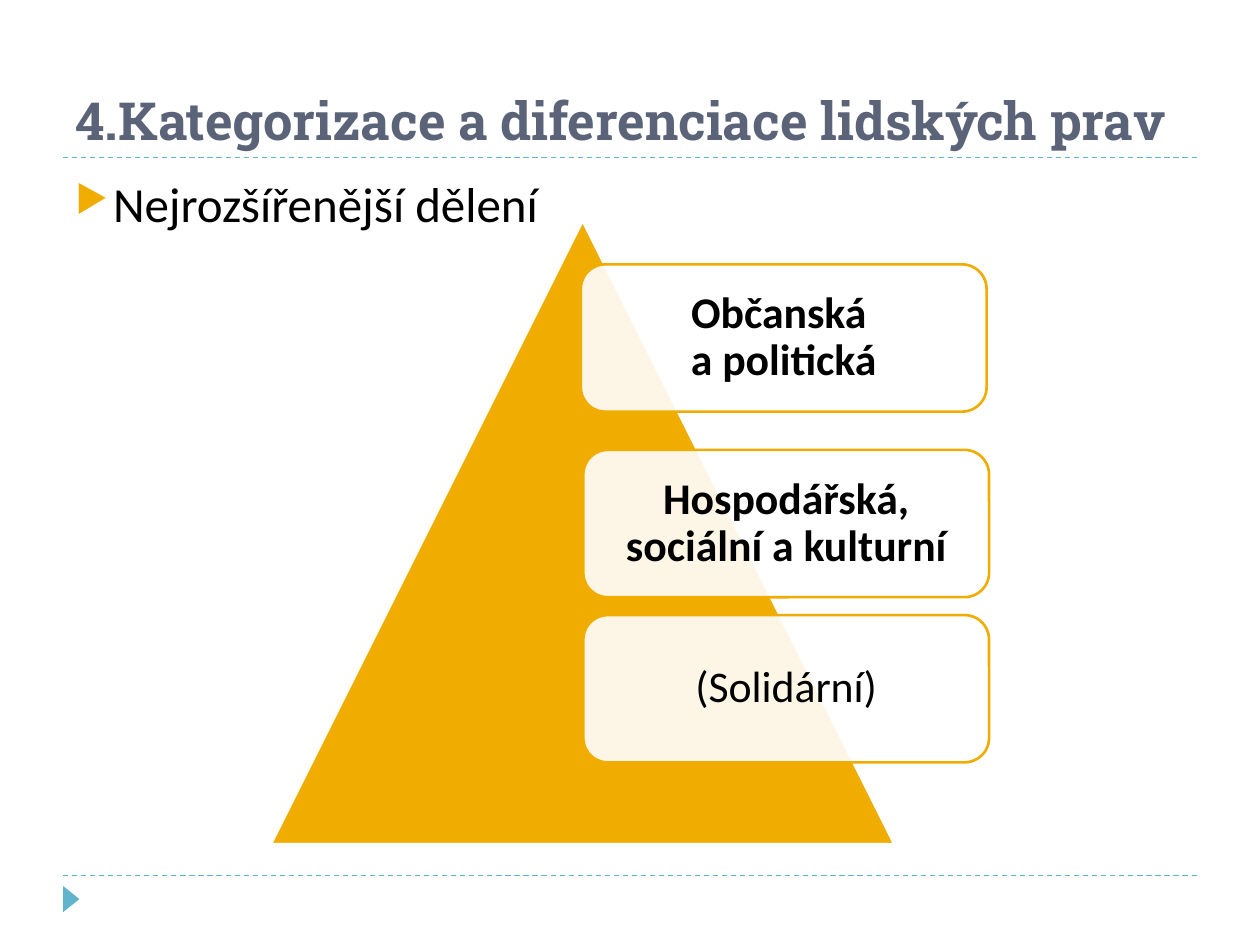
"""Build a slide that divides human rights into three groups on a pyramid."""
from dataclasses import dataclass

from lxml import etree
from pptx import Presentation
from pptx.dml.color import RGBColor
from pptx.enum.dml import MSO_LINE
from pptx.enum.shapes import MSO_CONNECTOR, MSO_SHAPE
from pptx.enum.text import MSO_ANCHOR, PP_ALIGN
from pptx.oxml.ns import qn
from pptx.util import Cm, Pt

DASH = MSO_LINE.DASH
STRAIGHT = MSO_CONNECTOR.STRAIGHT
TRIANGLE = MSO_SHAPE.ISOSCELES_TRIANGLE
ROUNDED = MSO_SHAPE.ROUNDED_RECTANGLE
TOP, MIDDLE, BOTTOM = MSO_ANCHOR.TOP, MSO_ANCHOR.MIDDLE, MSO_ANCHOR.BOTTOM
LEFT, CENTER = PP_ALIGN.LEFT, PP_ALIGN.CENTER


@dataclass(frozen=True)
class Theme:
    white: str = "FFFFFF"
    ink: str = "000000"
    heading: str = "5A6378"
    gold: str = "F0AD00"
    teal: str = "60B5CC"
    heading_font: str = "Roboto Slab"
    body_font: str = "Calibri"
    heading_size: float = 30
    body_size: float = 28
    card_size: float = 25
    rule_width: float = 0.75
    outline_width: float = 1.5


THEME = Theme()
CARD_WIDTH, CARD_HEIGHT = 8.18, 2.97
CARDS = (
    ("Občanská \va politická", 11.71, 5.33, True),
    ("Hospodářská, sociální a kulturní", 11.76, 9.07, True),
    ("(Solidární)", 11.76, 12.4, False),
)


def rgb(color):
    return RGBColor.from_string(color)


def box(left, top, width, height):
    return Cm(left), Cm(top), Cm(width), Cm(height)


def write_text(frame, text, *, size, font=THEME.body_font, color=THEME.ink, bold=False,
               align=LEFT, anchor=TOP, line_spacing=None, before=0, after=0):
    frame.word_wrap = True
    frame.vertical_anchor = anchor
    paragraph = frame.paragraphs[0]
    paragraph.text = text
    paragraph.alignment = align
    paragraph.line_spacing = line_spacing
    paragraph.space_before = Pt(before)
    paragraph.space_after = Pt(after)
    for run in paragraph.runs:
        run.font.name = font
        run.font.size = Pt(size)
        run.font.bold = bold
        run.font.color.rgb = rgb(color)
    return paragraph


def add_bullet(paragraph, symbol, color, percent, indent):
    properties = paragraph._p.get_or_add_pPr()
    properties.set("marL", str(indent))
    properties.set("indent", str(-indent))
    bullet_color = etree.SubElement(properties, qn("a:buClr"))
    etree.SubElement(bullet_color, qn("a:srgbClr"), val=color)
    etree.SubElement(properties, qn("a:buSzPct"), val=str(percent * 1000))
    etree.SubElement(properties, qn("a:buChar"), char=symbol)


def add_rule(slide, top):
    rule = slide.shapes.add_connector(STRAIGHT, Cm(1.27), Cm(top), Cm(24.13), Cm(top))
    rule.line.color.rgb = rgb(THEME.teal)
    rule.line.width = Pt(THEME.rule_width)
    rule.line.dash_style = DASH
    etree.SubElement(rule._element.spPr, qn("a:effectLst"))


def add_figure(slide, preset, place, fill, outline=None):
    figure = slide.shapes.add_shape(preset, *place)
    figure.shadow.inherit = False
    figure.fill.solid()
    figure.fill.fore_color.rgb = rgb(fill)
    if outline:
        figure.line.color.rgb = rgb(outline)
        figure.line.width = Pt(THEME.outline_width)
    else:
        figure.line.fill.background()
    return figure


def add_card(slide, text, left, top, bold):
    card = add_figure(slide, ROUNDED, box(left, top, CARD_WIDTH, CARD_HEIGHT),
                      THEME.white, THEME.gold)
    fill_color = card._element.spPr.find(qn("a:solidFill")).find(qn("a:srgbClr"))
    etree.SubElement(fill_color, qn("a:alpha"), val="90000")
    frame = card.text_frame
    frame.margin_left = frame.margin_right = Cm(0.25)
    frame.margin_top = frame.margin_bottom = Cm(0.25)
    write_text(frame, text, size=THEME.card_size, bold=bold, align=CENTER,
               anchor=MIDDLE, line_spacing=0.9, after=8.75)


def add_text(slide, place, text, **formatting):
    return write_text(slide.shapes.add_textbox(*place).text_frame, text, **formatting)


def main():
    presentation = Presentation()
    presentation.slide_width, presentation.slide_height = Cm(25.4), Cm(19.05)
    slide = presentation.slides.add_slide(presentation.slide_layouts[6])

    for top in (17.65, 3.18):
        add_rule(slide, top)
    page_marker = add_figure(slide, TRIANGLE, box(1.17, 17.96, 0.53, 0.33), THEME.teal)
    page_marker.rotation = 90

    add_text(slide, box(1.27, 0.43, 22.86, 2.74), "4.Kategorizace a diferenciace lidských prav",
             size=THEME.heading_size, font=THEME.heading_font, color=THEME.heading,
             bold=True, anchor=BOTTOM)
    division = add_text(slide, box(1.27, 3.38, 22.86, 13.72), "Nejrozšířenější dělení",
                        size=THEME.body_size, before=6)
    add_bullet(division, "▶", THEME.gold, 76, Cm(0.76))

    add_figure(slide, TRIANGLE, box(5.46, 4.45, 12.57, 12.57), THEME.gold, THEME.white)
    for card in CARDS:
        add_card(slide, *card)

    presentation.save("out.pptx")


if __name__ == "__main__":
    main()
